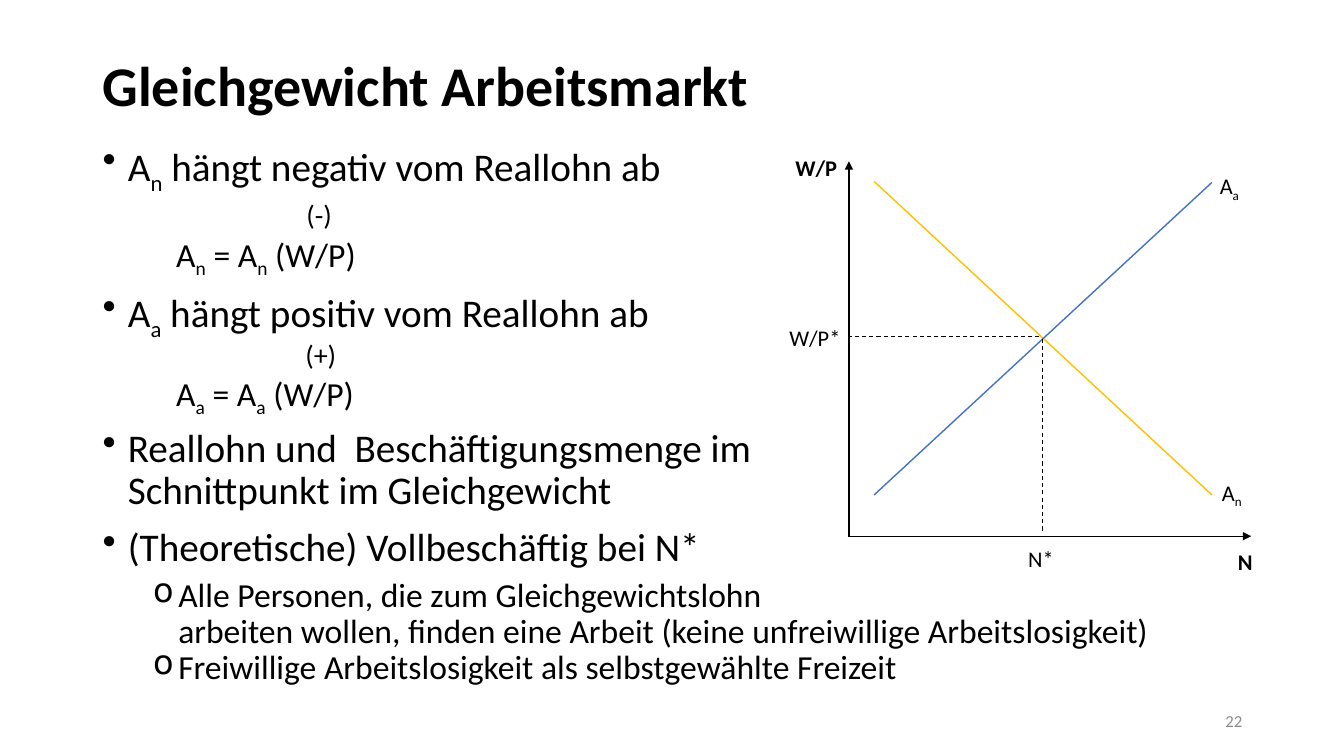
"""Build the slide on labour market equilibrium with its supply and demand diagram."""
from lxml import etree
from pptx import Presentation
from pptx.dml.color import RGBColor
from pptx.enum.dml import MSO_LINE
from pptx.enum.shapes import MSO_CONNECTOR
from pptx.enum.text import MSO_ANCHOR, PP_ALIGN
from pptx.oxml.ns import qn
from pptx.util import Pt

PX = 9144
FONT = "Calibri"
BLACK, GREY, DEMAND, SUPPLY = "000000", "8C8C8C", "FFC000", "4472C4"
STRAIGHT, DASH = MSO_CONNECTOR.STRAIGHT, MSO_LINE.DASH
TOP, MIDDLE = MSO_ANCHOR.TOP, MSO_ANCHOR.MIDDLE
LEFT, RIGHT = PP_ALIGN.LEFT, PP_ALIGN.RIGHT


def add_box(left, top, width, height, anchor=TOP):
    """Add an empty wrapping text box and return its text frame."""
    box = page.shapes.add_textbox(left * PX, top * PX, width * PX, height * PX)
    box.text_frame.word_wrap = True
    box.text_frame.vertical_anchor = anchor
    return box.text_frame


def write(para, text, size, color=BLACK, bold=False, align=LEFT):
    """Write text into a paragraph; underscores enclose subscripts."""
    para.alignment = align
    for row, line in enumerate(text.split("\n")):
        if row:
            para.add_line_break()
        for index, part in enumerate(line.split("_")):
            if not part:
                continue
            span = para.add_run()
            span.text = part
            span.font.name = FONT
            span.font.size = Pt(size)
            span.font.bold = bold
            span.font.color.rgb = RGBColor.from_string(color)
            if index % 2:
                span.font._element.set("baseline", "-25000")


deck = Presentation()
deck.slide_width, deck.slide_height = 1333 * PX, 750 * PX
page = deck.slides.add_slide(deck.slide_layouts[6])

title = add_box(92, 15, 1150, 145, MIDDLE).paragraphs[0]
title.line_spacing = 0.9
write(title, "Gleichgewicht Arbeitsmarkt", 40, bold=True)

body_paragraphs = [
    ("A_n_ hängt negativ vom Reallohn ab", 28, 25, "•", 0, 0),
    ("(-)", 20, 202, None, 7, 2),
    ("A_n_ = A_n_ (W/P)", 24, 73, None, 0, 0),
    ("A_a_ hängt positiv vom Reallohn ab", 28, 25, "•", 10, 0),
    ("(+)", 20, 201, None, 3, 1),
    ("A_a_ = A_a_ (W/P)", 24, 73, None, 0, 10),
    ("Reallohn und  Beschäftigungsmenge im\nSchnittpunkt im Gleichgewicht", 28, 25, "•", 0, 10),
    ("(Theoretische) Vollbeschäftig bei N*", 28, 25, "•", 0, 6),
    ("Alle Personen, die zum Gleichgewichtslohn\n"
     "arbeiten wollen, finden eine Arbeit (keine unfreiwillige Arbeitslosigkeit)", 24, 75, "o", 0, 0),
    ("Freiwillige Arbeitslosigkeit als selbstgewählte Freizeit", 24, 75, "o", 0, 0),
]
body = add_box(92, 137, 1166, 538)
for index, (text, size, indent, bullet, before, after) in enumerate(body_paragraphs):
    para = body.add_paragraph() if index else body.paragraphs[0]
    properties = para._p.get_or_add_pPr()
    properties.set("marL", str(indent * PX))
    properties.set("indent", str(-25 * PX if bullet else 0))
    if bullet:
        etree.SubElement(properties, qn("a:buChar")).set("char", bullet)
    para.line_spacing = 0.9
    para.space_before, para.space_after = Pt(before), Pt(after)
    write(para, text, size)

write(add_box(942, 695, 300, 40, MIDDLE).paragraphs[0], "22", 12, GREY, align=RIGHT)

diagram_lines = [
    (842, 532, 842, 160, BLACK, 1, "axis"),
    (841, 532, 1241, 532, BLACK, 1, "axis"),
    (867, 180, 1202, 491, DEMAND, 1, "curve"),
    (867, 491, 1202, 181, SUPPLY, 1, "curve"),
    (1031, 334, 842, 334, BLACK, 0.75, "guide"),
    (1034, 336, 1034, 529, BLACK, 0.75, "guide"),
]
for x1, y1, x2, y2, color, weight, role in diagram_lines:
    connector = page.shapes.add_connector(STRAIGHT, x1 * PX, y1 * PX, x2 * PX, y2 * PX)
    connector.line.color.rgb = RGBColor.from_string(color)
    connector.line.width = Pt(weight)
    if role == "guide":
        connector.line.dash_style = DASH
    if role == "axis":
        outline = connector.line._get_or_add_ln()
        etree.SubElement(outline, qn("a:tailEnd")).set("type", "triangle")
    etree.SubElement(connector._element.spPr, qn("a:effectLst"))

diagram_labels = [
    ("W/P", 779, 148, 63, True),
    ("N", 1218, 539, 63, True),
    ("A_a_", 1200, 166, 63, False),
    ("A_n_", 1202, 470, 63, False),
    ("W/P*", 773, 317, 77, False),
    ("N*", 1010, 536, 63, False),
]
for text, left, top, width, bold in diagram_labels:
    write(add_box(left, top, width, 37).paragraphs[0], text, 16, bold=bold)

deck.save("out.pptx")
